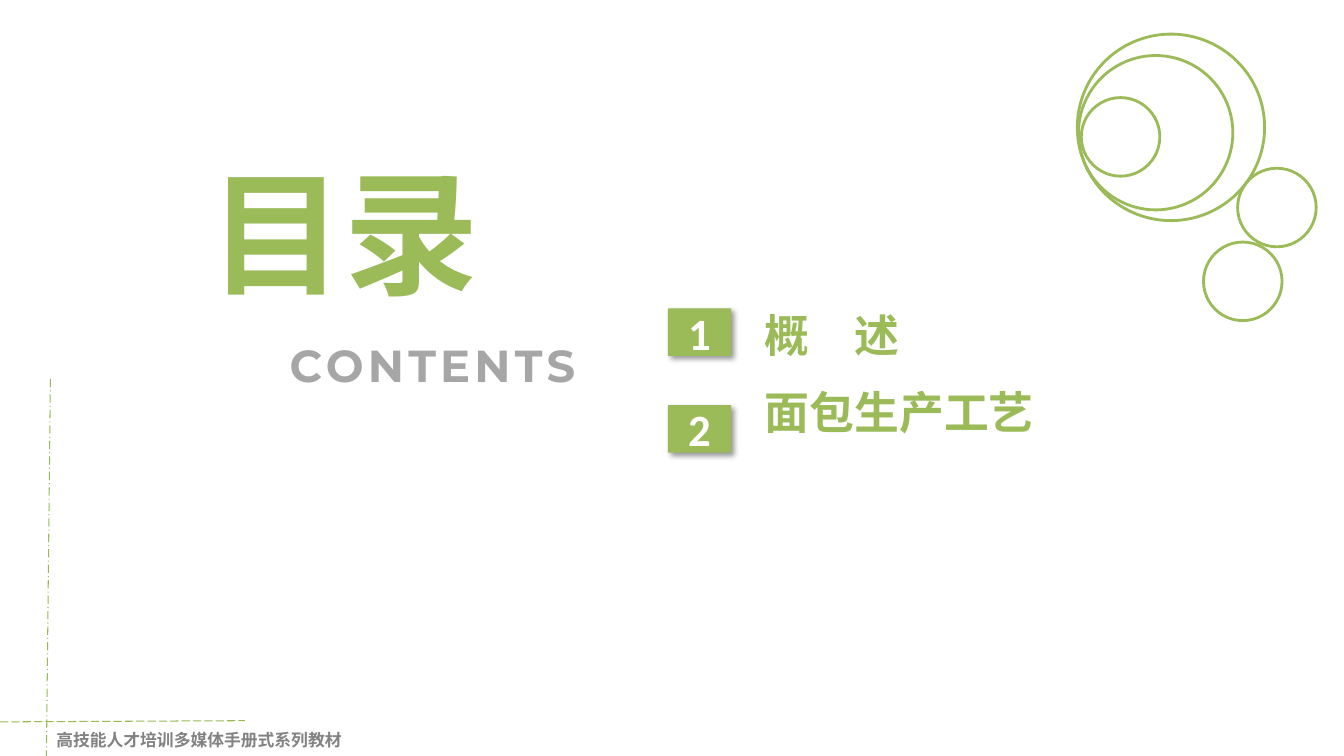
from lxml import etree
from pptx import Presentation
from pptx.dml.color import RGBColor
from pptx.enum.dml import MSO_LINE_DASH_STYLE as Dash
from pptx.enum.shapes import MSO_CONNECTOR, MSO_SHAPE
from pptx.enum.text import MSO_ANCHOR, PP_ALIGN
from pptx.oxml import parse_xml
from pptx.oxml.ns import nsdecls, qn
from pptx.util import Cm, Pt

COLORS = {"green": "9BBB59", "guide": "98B955", "grey": "A6A6A6",
          "footer": "828282", "white": "FFFFFF", "shadow": "000000"}
CJK = "Noto Sans CJK SC"
ENTRIES = ["概　述", "面包生产工艺"]
# Left, top, width, height in cm
RINGS = [(27.15, 0.86, 4.72, 4.7), (27.18, 1.4, 3.89, 3.89),
         (31.19, 4.24, 1.98, 1.98), (27.25, 2.46, 1.98, 1.98),
         (30.33, 6.1, 1.98, 1.98)]


def rgb(name):
    return RGBColor.from_string(COLORS[name])


def shadow_xml():
    return parse_xml(
        f'<a:effectLst {nsdecls("a")}><a:outerShdw blurRad="{Pt(4)}" dist="{Pt(3)}" '
        f'dir="2700000" algn="tl" rotWithShape="0"><a:srgbClr val="{COLORS["shadow"]}">'
        '<a:alpha val="40000"/></a:srgbClr></a:outerShdw></a:effectLst>')


def add_text(p, text, size=32, font=CJK, color="green", align=PP_ALIGN.LEFT,
             spacing=0, shadow=False):
    p.alignment = align
    r = p.add_run()
    r.text = text
    r.font.size, r.font.bold, r.font.name = Pt(size), True, font
    r.font.color.rgb = rgb(color)
    rpr = r.font._element
    if spacing:
        rpr.set("spc", str(spacing * 100))
    if shadow:
        rpr.find(qn("a:solidFill")).addnext(shadow_xml())
    east_asian = etree.Element(qn("a:ea"), typeface=CJK)
    rpr.find(qn("a:latin")).addnext(east_asian)


def place(sp, left, top, width, height):
    sp.left, sp.top, sp.width, sp.height = Cm(left), Cm(top), Cm(width), Cm(height)
    sp.text_frame.vertical_anchor = MSO_ANCHOR.TOP
    return sp.text_frame


def add_box(s, left, top, width, height, wrap=True):
    tf = s.shapes.add_textbox(Cm(left), Cm(top), Cm(width), Cm(height)).text_frame
    tf.word_wrap = wrap
    return tf.paragraphs[0]


def add_guide(s, x1, y1, x2, y2, dash):
    line = s.shapes.add_connector(MSO_CONNECTOR.STRAIGHT, Cm(x1), Cm(y1), Cm(x2), Cm(y2))
    line.line.color.rgb = rgb("guide")
    line.line.width = Pt(0.75)
    line.line.dash_style = dash
    etree.SubElement(line._element.spPr, qn("a:effectLst"))


def add_ring(s, left, top, width, height):
    sp = s.shapes.add_shape(MSO_SHAPE.OVAL, Cm(left), Cm(top), Cm(width), Cm(height))
    sp.shadow.inherit = False
    sp.fill.background()
    sp.line.color.rgb = rgb("green")
    sp.line.width = Pt(2)


def add_number(s, number, left, top):
    sp = s.shapes.add_shape(MSO_SHAPE.RECTANGLE, Cm(left), Cm(top), Cm(1.6), Cm(1.2))
    sp.fill.solid()
    sp.fill.fore_color.rgb = rgb("green")
    sp.line.fill.background()
    sp._element.spPr.append(shadow_xml())
    tf = sp.text_frame
    tf.vertical_anchor = MSO_ANCHOR.MIDDLE
    tf.margin_left = tf.margin_right = tf.margin_top = tf.margin_bottom = 0
    add_text(tf.paragraphs[0], str(number), font="Calibri", color="white",
             align=PP_ALIGN.CENTER)


def add_entries(body, entries):
    tf = place(body, 19.02, 7.62, 8, 3.9)
    for i, entry in enumerate(entries):
        p = tf.add_paragraph() if i else tf.paragraphs[0]
        p.space_before = Pt(17 if i else 0)
        ppr = p._p.get_or_add_pPr()
        ppr.set("marL", "0")
        ppr.set("indent", "0")
        etree.SubElement(ppr, qn("a:buNone"))
        add_text(p, entry)


def main():
    prs = Presentation()
    prs.slide_width, prs.slide_height = Cm(33.87), Cm(19.05)
    s = prs.slides.add_slide(prs.slide_layouts[1])

    # Corner guides and footer
    add_guide(s, 1.27, 9.55, 1.17, 19.05, Dash.LONG_DASH_DOT)
    add_guide(s, 0, 18.19, 6.17, 18.16, Dash.LONG_DASH)
    add_text(add_box(s, 1.17, 18.26, 7.77, 0.76, wrap=False),
             "高技能人才培训多媒体手册式系列教材", size=12,
             font="Times New Roman", color="footer")

    # Ring ornament
    for ring in RINGS:
        add_ring(s, *ring)

    # Heading
    title = place(s.shapes.title, 3.4, 3.66, 10.54, 4.37)
    add_text(title.paragraphs[0], "目录", size=96, align=PP_ALIGN.CENTER, shadow=True)
    add_text(add_box(s, 4.98, 8.38, 11.84, 1.63), "CONTENTS", font="Montserrat",
             color="grey", align=PP_ALIGN.CENTER, spacing=3)

    # Numbered entries
    for i in range(len(ENTRIES)):
        add_number(s, i + 1, 16.83, 7.77 + 2.44 * i)
    add_entries(s.placeholders[1], ENTRIES)

    prs.save("out.pptx")


if __name__ == "__main__":
    main()
